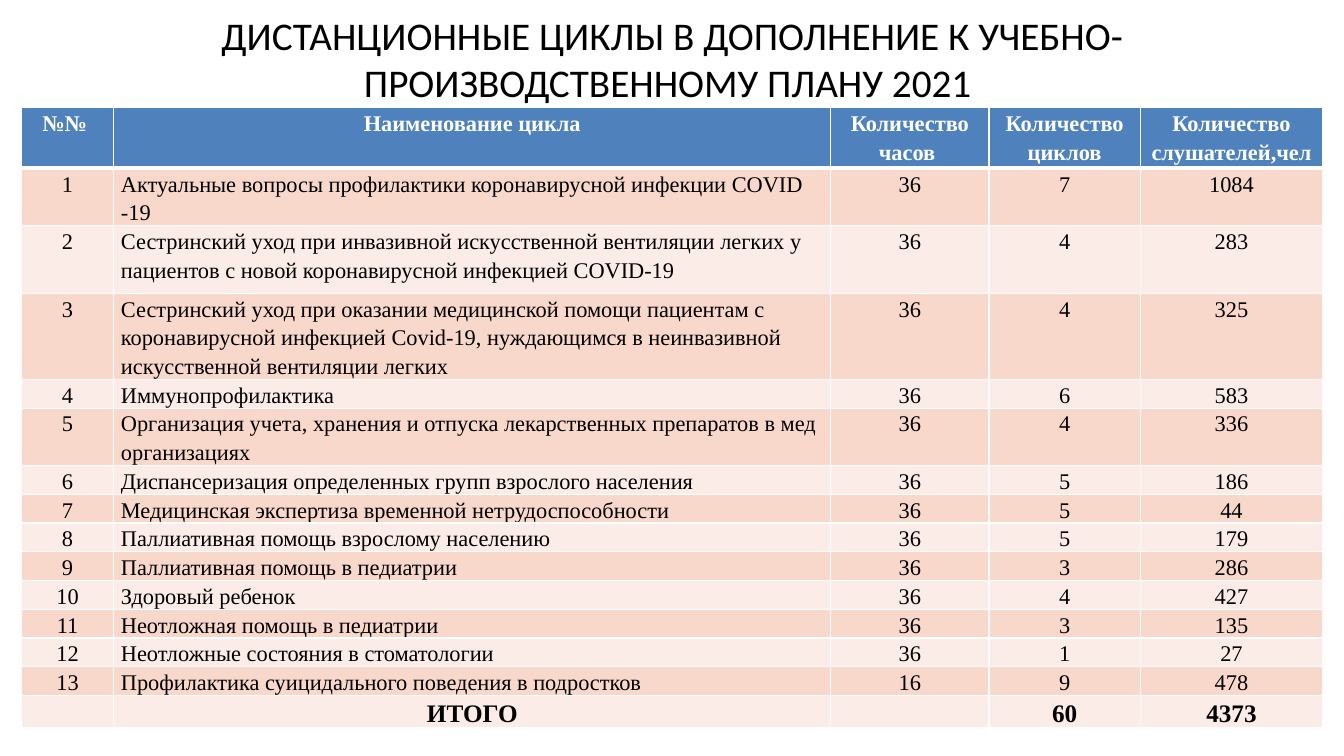
import dataclasses

import lxml.etree
import pptx
import pptx.dml.color
import pptx.enum.text
import pptx.oxml.ns
import pptx.util

Inches = pptx.util.Inches
Pt = pptx.util.Pt
Align = pptx.enum.text.PP_ALIGN


@dataclasses.dataclass(frozen=True)
class Theme:
    """Colours, fonts and type sizes of the slide."""
    ink: str = "000000"
    white: str = "FFFFFF"
    header: str = "4F81BD"
    bands: tuple = ("F9D8CC", "FCECE7")
    title_font: str = "Calibri"
    table_font: str = "Times New Roman"
    title_size: int = 28
    body_size: int = 16
    total_size: int = 18
    leading: float = 1.28
    thin: int = 1
    thick: int = 3


THEME = Theme()
TITLE = "ДИСТАНЦИОННЫЕ ЦИКЛЫ В ДОПОЛНЕНИЕ К УЧЕБНО-ПРОИЗВОДСТВЕННОМУ ПЛАНУ 2021 "
HEADINGS = ("№№ ", "Наименование цикла", "Количество часов ",
            "Количество циклов", "Количество слушателей,чел")
COLUMN_WIDTHS = (0.92, 7.11, 1.57, 1.5, 1.81)
HEADER_HEIGHT = 0.6
LINE_HEIGHT = 0.28
TOTAL_HEIGHT = 0.32
COURSES = (
    ("Актуальные вопросы профилактики коронавирусной инфекции COVID -19",
     36, 7, 1084, 0.57),
    ("Сестринский уход при инвазивной искусственной вентиляции легких у "
     "пациентов с новой коронавирусной инфекцией COVID-19", 36, 4, 283, 0.67),
    ("Сестринский уход при оказании медицинской помощи пациентам с "
     "коронавирусной инфекцией Covid-19, нуждающимся в неинвазивной "
     "искусственной вентиляции легких", 36, 4, 325, 0.85),
    ("Иммунопрофилактика", 36, 6, 583, LINE_HEIGHT),
    ("Организация учета, хранения и отпуска лекарственных препаратов в мед "
     "организациях", 36, 4, 336, 0.57),
    ("Диспансеризация определенных групп взрослого населения",
     36, 5, 186, LINE_HEIGHT),
    ("Медицинская экспертиза временной нетрудоспособности",
     36, 5, 44, LINE_HEIGHT),
    ("Паллиативная помощь взрослому населению", 36, 5, 179, LINE_HEIGHT),
    ("Паллиативная помощь в педиатрии", 36, 3, 286, LINE_HEIGHT),
    ("Здоровый ребенок", 36, 4, 427, LINE_HEIGHT),
    ("Неотложная помощь в педиатрии", 36, 3, 135, LINE_HEIGHT),
    ("Неотложные состояния в стоматологии", 36, 1, 27, LINE_HEIGHT),
    ("Профилактика суицидального поведения в подростков",
     16, 9, 478, LINE_HEIGHT),
)
TOTALS = ("", "ИТОГО", "", 60, 4373)


def rgb(colour):
    """Turn a hex string into a colour."""
    return pptx.dml.color.RGBColor.from_string(colour)


def add_span(para, text, font, size, colour, bold=False):
    """Add one formatted run to a paragraph."""
    span = para.add_run()
    span.text = text
    span.font.name = font
    span.font.size = Pt(size)
    span.font.color.rgb = rgb(colour)
    span.font.bold = bold


def add_title(page, left, top, width, height):
    """Place the centred slide title in the given box."""
    box = page.shapes.add_textbox(*map(Inches, (left, top, width, height)))
    frame = box.text_frame
    frame.word_wrap = True
    frame.margin_top = frame.margin_bottom = 0
    frame.vertical_anchor = pptx.enum.text.MSO_ANCHOR.MIDDLE
    para = frame.paragraphs[0]
    para.alignment = Align.CENTER
    add_span(para, TITLE, THEME.title_font, THEME.title_size, THEME.ink)


def set_borders(cell, top, bottom):
    """Draw white borders around a cell, ahead of its fill."""
    properties = cell._tc.get_or_add_tcPr()
    qn = pptx.oxml.ns.qn
    sides = (("L", THEME.thin), ("R", THEME.thin), ("T", top), ("B", bottom))
    for position, (side, weight) in enumerate(sides):
        line = lxml.etree.Element(qn(f"a:ln{side}"), w=str(Pt(weight)))
        fill = lxml.etree.SubElement(line, qn("a:solidFill"))
        lxml.etree.SubElement(fill, qn("a:srgbClr"), val=THEME.white)
        properties.insert(position, line)


def fill_row(table, index, values, fill, colour, size, bold, name_align):
    """Write and format all the cells of one table row."""
    top = THEME.thick if index == 1 else THEME.thin
    bottom = THEME.thick if index == 0 else THEME.thin
    for column, value in enumerate(values):
        cell = table.cell(index, column)
        cell.margin_left = cell.margin_right = Inches(0.07)
        cell.margin_top = cell.margin_bottom = 0
        cell.fill.solid()
        cell.fill.fore_color.rgb = rgb(fill)
        set_borders(cell, top, bottom)
        if value == "":
            continue
        para = cell.text_frame.paragraphs[0]
        para.alignment = name_align if column == 1 else Align.CENTER
        para.line_spacing = Pt(round(size * THEME.leading, 1))
        add_span(para, str(value), THEME.table_font, size, colour, bold)


def add_courses(page, left, top, width):
    """Place the table of courses with its header and totals."""
    heights = [HEADER_HEIGHT, *(course[-1] for course in COURSES), TOTAL_HEIGHT]
    frame = page.shapes.add_table(
        len(heights), len(HEADINGS),
        *map(Inches, (left, top, width, sum(heights))))
    table = frame.table
    for column, share in zip(table.columns, COLUMN_WIDTHS):
        column.width = Inches(width * share / sum(COLUMN_WIDTHS))
    for row, height in zip(table.rows, heights):
        row.height = Inches(height)

    fill_row(table, 0, HEADINGS, THEME.header, THEME.white,
             THEME.body_size, True, Align.CENTER)
    for number, course in enumerate(COURSES, 1):
        fill_row(table, number, (number, *course[:-1]),
                 THEME.bands[(number - 1) % 2], THEME.ink,
                 THEME.body_size, False, Align.LEFT)
    fill_row(table, len(heights) - 1, TOTALS, THEME.bands[1], THEME.ink,
             THEME.total_size, True, Align.CENTER)


def main():
    """Build the slide and save the deck."""
    deck = pptx.Presentation()
    deck.slide_width = Inches(13.33)
    deck.slide_height = Inches(7.5)
    page = deck.slides.add_slide(deck.slide_layouts[6])
    add_title(page, 0.21, 0.1, 12.91, 0.95)
    add_courses(page, 0.21, 1.07, 12.91)
    deck.save("out.pptx")


if __name__ == "__main__":
    main()
